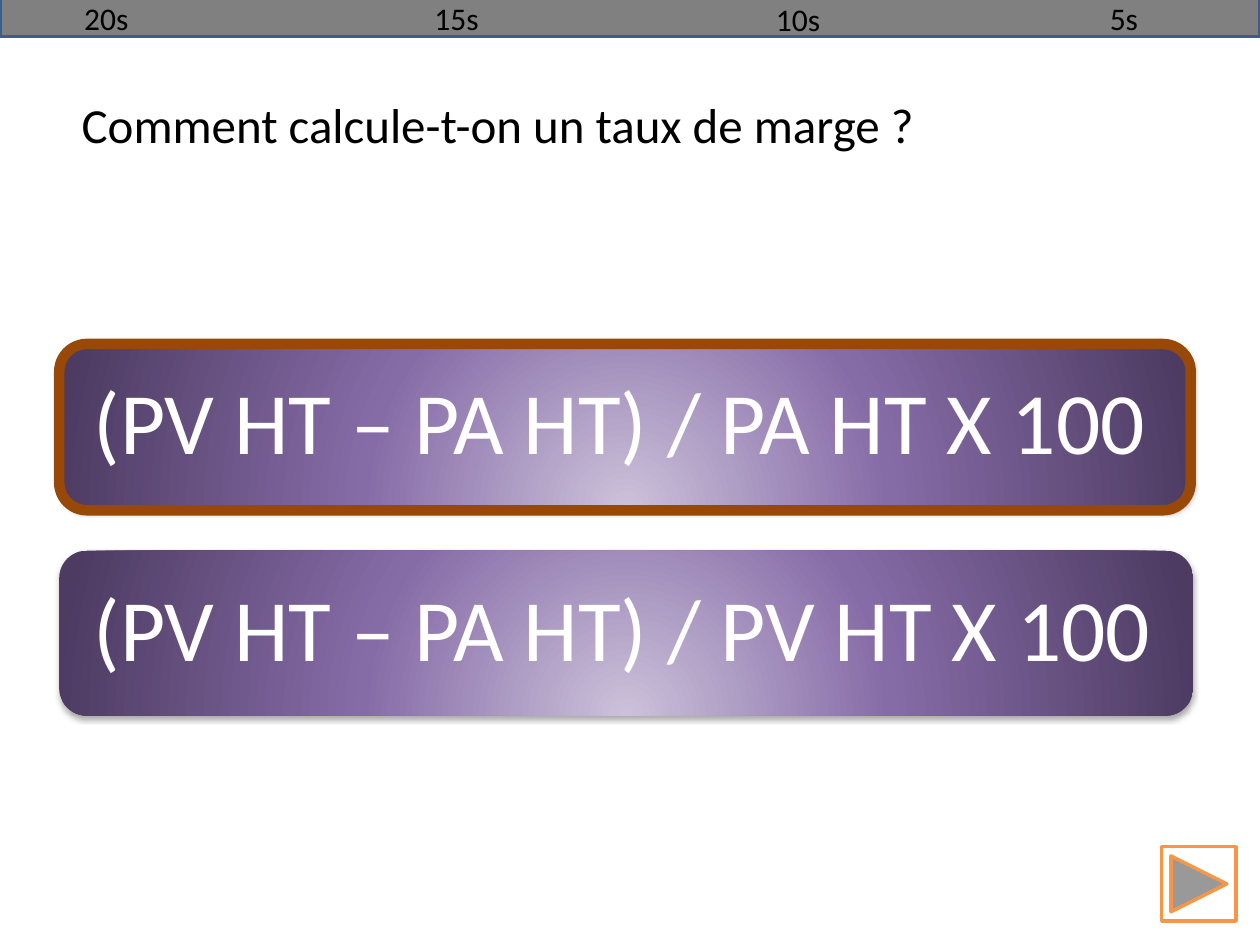
import pptx
import pptx.util
import pptx.oxml
import pptx.oxml.ns
import pptx.dml.color
import pptx.enum.shapes
import pptx.enum.text

RGB = pptx.dml.color.RGBColor
KIND = pptx.enum.shapes.MSO_SHAPE
ANCHOR = pptx.enum.text.MSO_ANCHOR
ALIGN = pptx.enum.text.PP_ALIGN

BLACK = RGB(0x00, 0x00, 0x00)
WHITE = RGB(0xFF, 0xFF, 0xFF)
GREY = RGB(0x80, 0x80, 0x80)
BLUE = RGB(0x3A, 0x5F, 0x8C)
BROWN = RGB(0x98, 0x48, 0x07)
ORANGE = RGB(0xF7, 0x96, 0x46)
LILAC = RGB(0xCC, 0xC1, 0xDA)
PURPLE = RGB(0x86, 0x6C, 0xA7)
PLUM = RGB(0x4D, 0x3B, 0x62)

COLS, ROWS = 100, 75
SPACE = pptx.oxml.ns.nsdecls("a")


class Quiz:
    font = "Calibri"
    glow = ((0, LILAC), (46, PURPLE), (100, PLUM))

    def __init__(self):
        self.deck = pptx.Presentation()
        self.deck.slide_width = pptx.util.Inches(10)
        self.deck.slide_height = pptx.util.Inches(7.5)
        self.slide = self.deck.slides.add_slide(self.deck.slide_layouts[6])

    def place(self, left, top, wide, high):
        col = self.deck.slide_width / COLS
        row = self.deck.slide_height / ROWS
        return [round(n) for n in (left * col, top * row, wide * col, high * row)]

    def letter(self, shape, text, size, color):
        frame = shape.text_frame
        frame.text = text
        frame.word_wrap = True
        para = frame.paragraphs[0]
        para.alignment = ALIGN.LEFT
        font = para.runs[0].font
        font.name, font.size = self.font, pptx.util.Pt(size)
        font.color.rgb = color
        return frame

    def label(self, text, box, size):
        shape = self.slide.shapes.add_textbox(*self.place(*box))
        self.letter(shape, text, size, BLACK)

    def shape(self, kind, box, fill=None, line=None, width=2):
        shape = self.slide.shapes.add_shape(kind, *self.place(*box))
        shape.shadow.inherit = False
        if fill is None:
            shape.fill.background()
        else:
            shape.fill.solid()
            shape.fill.fore_color.rgb = fill
        if line is None:
            shape.line.fill.background()
        else:
            shape.line.color.rgb = line
            shape.line.width = pptx.util.Pt(width)
        return shape

    def shade(self, shape):
        stops = "".join(
            f'<a:gs pos="{pos * 1000}"><a:srgbClr val="{color}"/></a:gs>'
            for pos, color in self.glow
        )
        fill = pptx.oxml.parse_xml(
            f'<a:gradFill {SPACE} rotWithShape="1"><a:gsLst>{stops}</a:gsLst>'
            '<a:path path="circle"><a:fillToRect l="50000" t="130000" '
            'r="50000" b="-30000"/></a:path></a:gradFill>'
        )
        props = shape._element.spPr
        props.replace(props.find(pptx.oxml.ns.qn("a:noFill")), fill)
        props.find(pptx.oxml.ns.qn("a:effectLst")).append(pptx.oxml.parse_xml(
            f'<a:outerShdw {SPACE} blurRad="40000" dist="23000" dir="5400000" '
            'rotWithShape="0"><a:srgbClr val="000000"><a:alpha val="35000"/>'
            '</a:srgbClr></a:outerShdw>'
        ))

    def card(self, text, box):
        shape = self.shape(KIND.ROUNDED_RECTANGLE, box)
        self.shade(shape)
        frame = self.letter(shape, text, 50, WHITE)
        frame.vertical_anchor = ANCHOR.MIDDLE
        frame.paragraphs[0].line_spacing = 0.9
        inset = pptx.util.Inches(0.21)
        frame.margin_left = frame.margin_right = inset
        frame.margin_top = frame.margin_bottom = inset


def main():
    quiz = Quiz()
    for step, base in enumerate(("PA", "PV")):
        quiz.card(f"(PV HT – PA HT) / {base} HT X 100",
                  (4.7, 27.3 + 16.4 * step, 90, 13.1))
    quiz.label("Comment calcule-t-on un taux de marge ?", (5.5, 7, 90.6, 12.2), 28)
    quiz.shape(KIND.ROUNDED_RECTANGLE, (4.7, 27.3, 89.8, 13.2), line=BROWN, width=6)
    arrow = quiz.shape(KIND.ACTION_BUTTON_BACK_OR_PREVIOUS,
                       (92.2, 67.2, 5.9, 5.9), WHITE, ORANGE)
    arrow.rotation = 180
    quiz.shape(KIND.RECTANGLE, (0, -0.2, 100, 3.1), GREY, BLUE)
    for text, left, top, wide in (
        ("5s", 87.1, -0.6, 4.7),
        ("10s", 60.6, -0.5, 6.3),
        ("15s", 33.5, -0.6, 6.3),
        ("20s", 5.7, -0.6, 6.3),
    ):
        quiz.label(text, (left, top, wide, 4), 18)
    quiz.deck.save("out.pptx")


if __name__ == "__main__":
    main()
